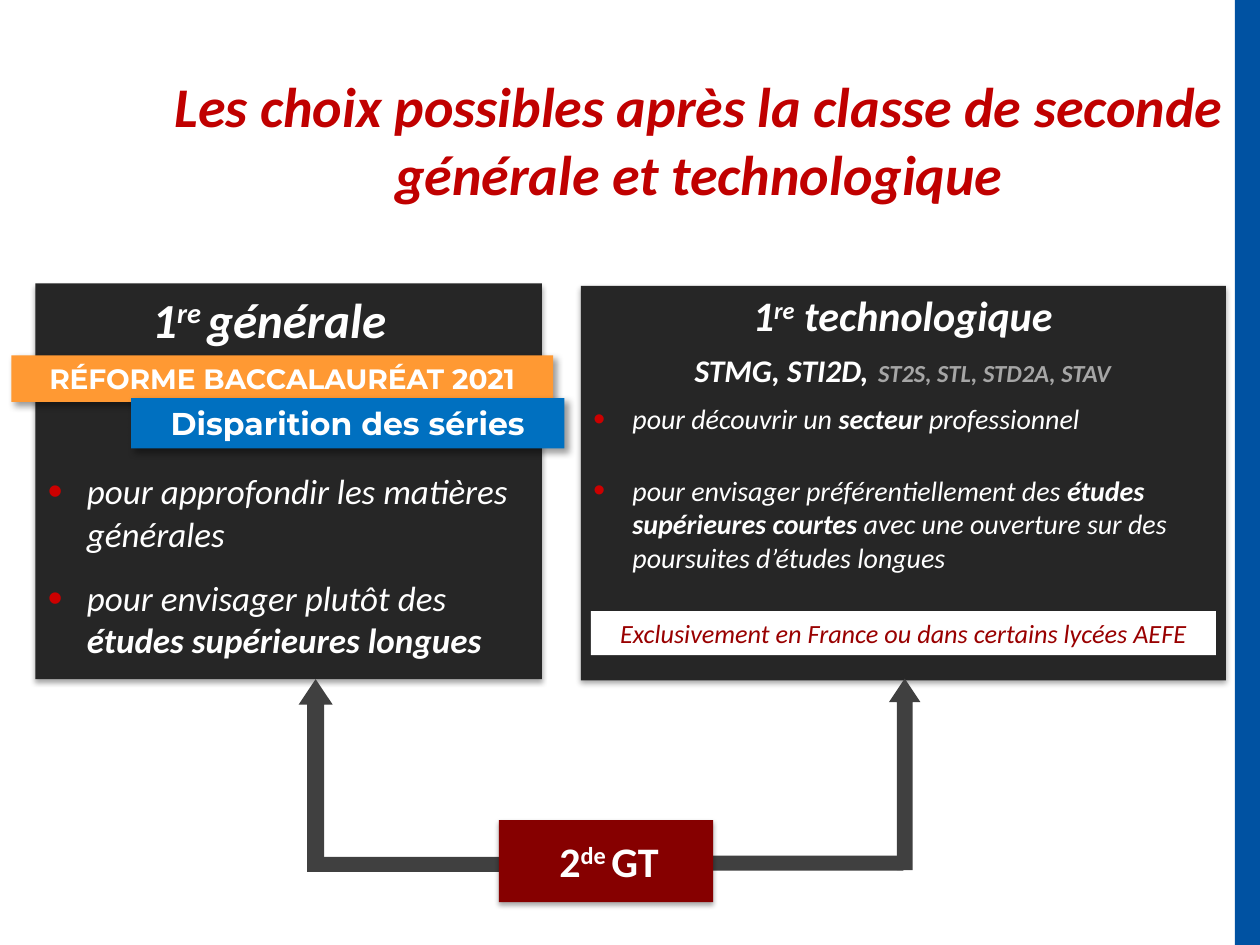
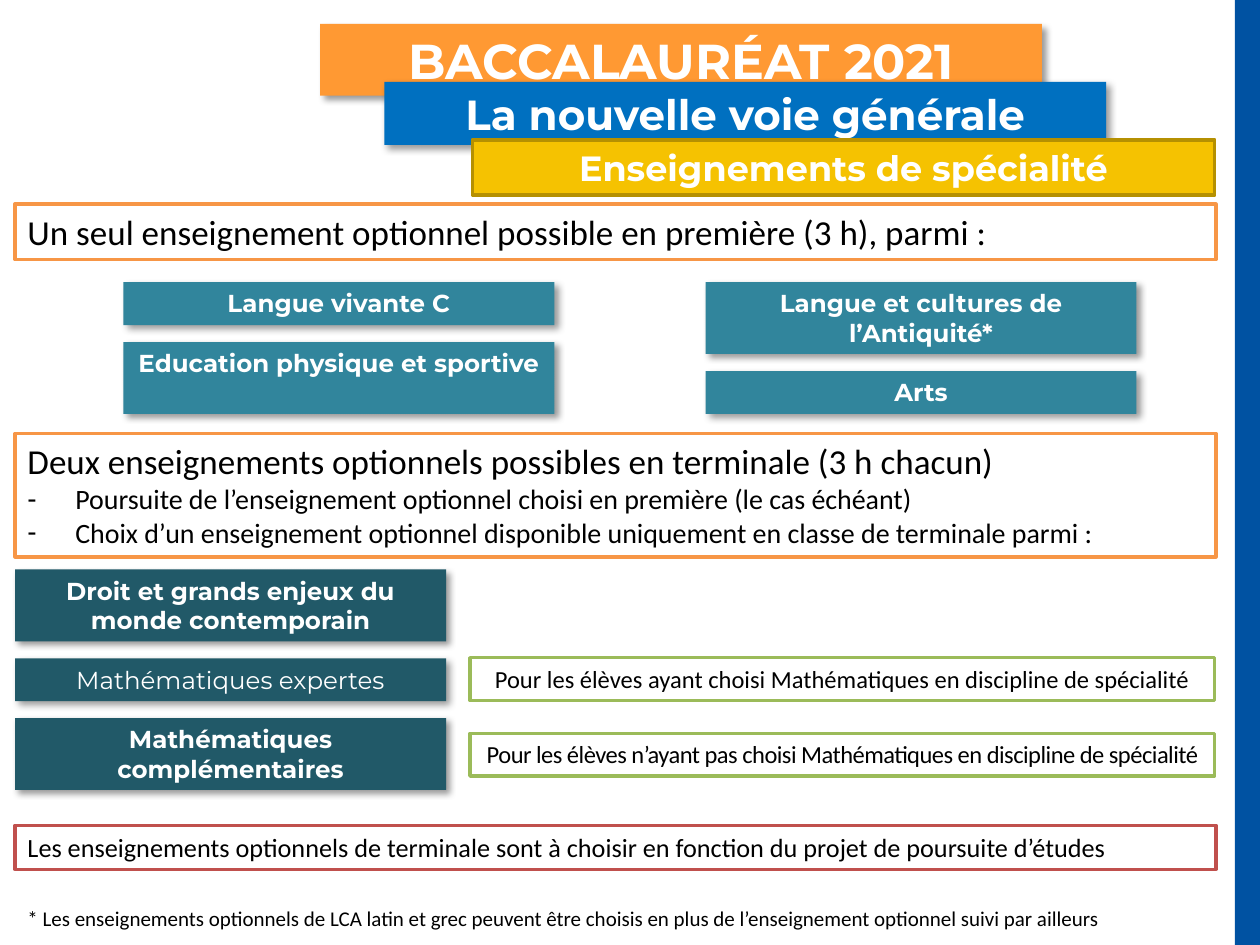
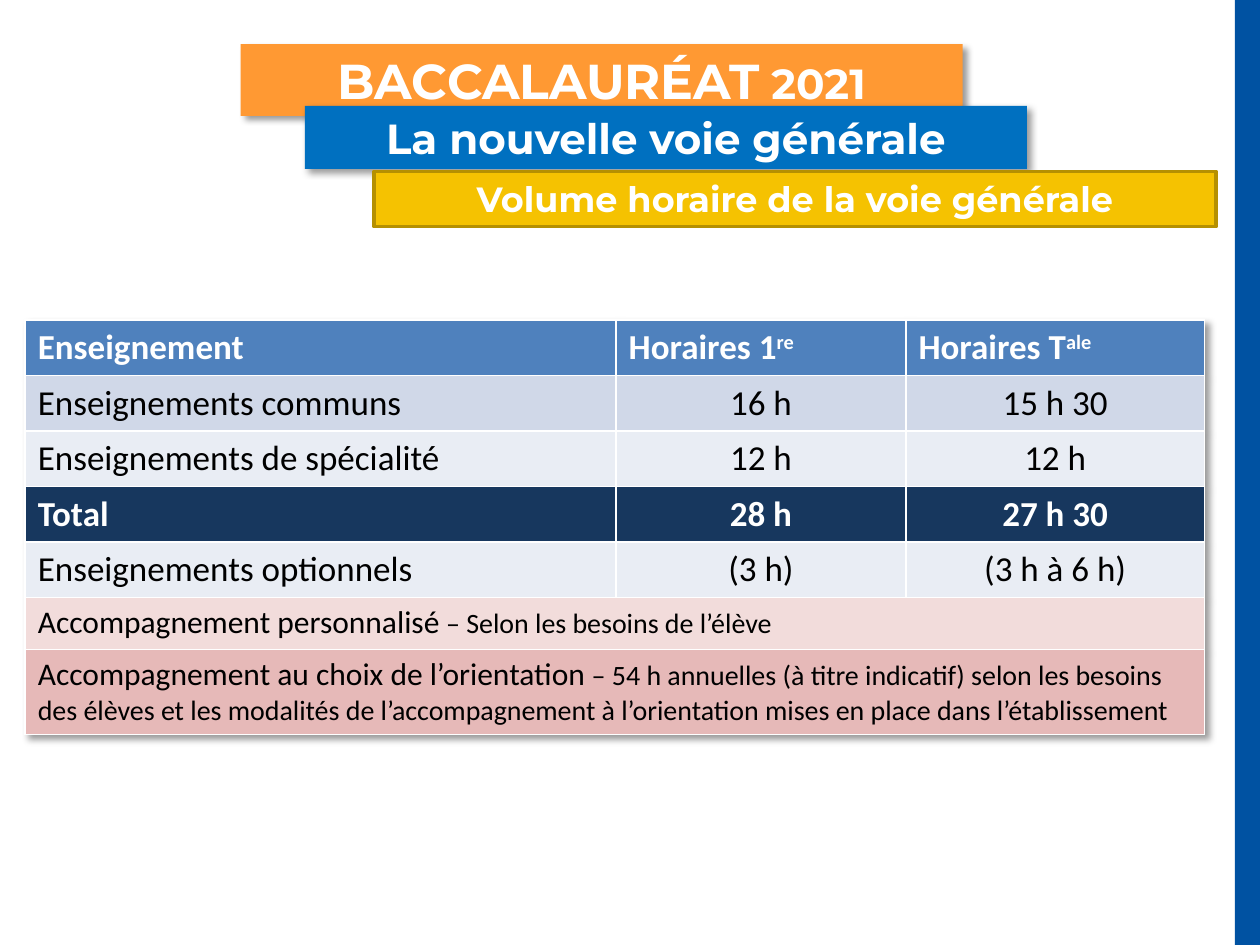
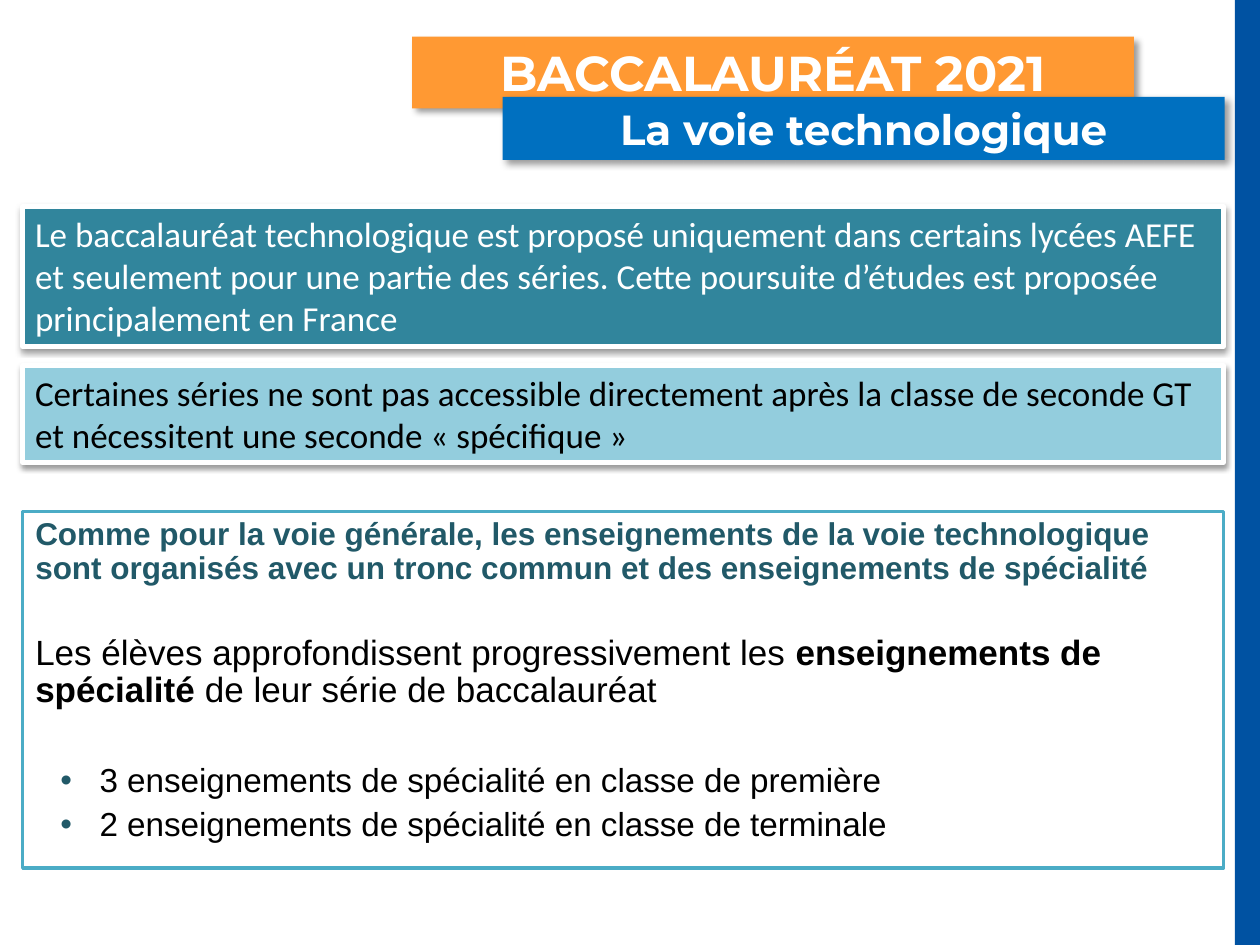
from dataclasses import dataclass, replace
from typing import Any, NamedTuple, Optional

from lxml import etree
from pptx import Presentation
from pptx import util as u
from pptx.dml.color import RGBColor
from pptx.enum import shapes, text
from pptx.oxml.ns import qn

# Shared look
COLORS = {
    "white": "FFFFFF", "black": "000000", "band": "0052A2",
    "red": "C00000", "bullet": "CC0000", "maroon": "860000", "notice": "990000",
    "panel": "262626", "arrow": "404040", "muted": "A6A6A6",
    "orange": "FF9933", "blue": "0070C0", "yellow": "F5C201", "ochre": "B59001",
    "teal": "31859C", "dark_teal": "215968", "light_teal": "93CDDD", "aqua": "4BACC6",
    "frame_orange": "F79646", "frame_green": "9BBB59", "frame_red": "C0504D",
    "header": "4F81BD", "row_dark": "D0D8E8", "row_light": "E9EDF4", "total": "17375E",
    "pink": "F2DCDB", "rose": "E6B9B8",
}
WIDTH, HEIGHT = u.Inches(10), u.Inches(7.5)
COLUMN, ROW = WIDTH / 100, HEIGHT / 75  # grid of 100 columns by 75 rows
TITLE_ONLY, TITLE_AND_BODY, TWO_BODIES = 5, 1, 3
LEFT, CENTER = text.PP_ALIGN.LEFT, text.PP_ALIGN.CENTER
RECTANGLE = shapes.MSO_SHAPE.RECTANGLE


class Place(NamedTuple):
    """Columns and rows of the grid."""
    left: float
    top: float
    width: float
    height: float

    def lengths(self) -> list[u.Emu]:
        return [u.Emu(round(value * unit)) for value, unit in zip(self, (COLUMN, ROW) * 2)]


class Shadow(NamedTuple):
    opacity: int
    blur: float
    distance: float
    angle: int


@dataclass(frozen=True)
class Style:
    font: str = "Calibri"
    size: float = 20
    color: str = "black"
    bold: bool = False
    italic: bool = False
    raised: bool = False
    spacing: float = 0


class Span(NamedTuple):
    text: str
    style: Style


@dataclass(frozen=True)
class Line:
    spans: tuple[Span, ...]
    align: Any = LEFT
    before: float = 0
    leading: float = 1
    margin: float = 0
    hanging: float = 0
    bullet: str = ""
    bullet_color: str = "black"
    bullet_percent: int = 100


@dataclass(frozen=True)
class Box:
    place: Place
    lines: tuple[Line, ...] = ()
    fill: Optional[str] = None
    outline: Optional[str] = None
    outline_width: float = 2
    shadow: Optional[Shadow] = None
    wrap: bool = True


CARD_SHADOW = Shadow(40, 4, 3, 45)
PANEL_SHADOW = Shadow(35, 3.1, 1.8, 90)
NOTE_SHADOW = Shadow(38, 3.1, 1.6, 90)
BODY = Style()
BANNER = Style("Montserrat", 28, "white", bold=True)
CARD = replace(BANNER, size=14)
EXAM = "BACCALAURÉAT"


# Drawing tools
def rgb(name: str) -> RGBColor:
    return RGBColor.from_string(COLORS[name])


def line(content: str, style: Style, **layout: Any) -> Line:
    return Line((Span(content, style),), **layout)


def effect_list(parent: Any, shadow: Shadow) -> None:
    outer = etree.SubElement(
        parent, qn("a:outerShdw"), blurRad=str(u.Pt(shadow.blur)),
        dist=str(u.Pt(shadow.distance)), dir=str(shadow.angle * 60000),
        algn="ctr", rotWithShape="0")
    color = etree.SubElement(outer, qn("a:srgbClr"), val=COLORS["black"])
    etree.SubElement(color, qn("a:alpha"), val=str(shadow.opacity * 1000))


def set_bullet(paragraph: Any, layout: Line) -> None:
    properties = paragraph._p.get_or_add_pPr()
    properties.set("marL", str(u.Inches(layout.margin)))
    properties.set("indent", str(-u.Inches(layout.hanging)))
    if not layout.bullet:
        etree.SubElement(properties, qn("a:buNone"))
        return
    color = etree.SubElement(properties, qn("a:buClr"))
    etree.SubElement(color, qn("a:srgbClr"), val=COLORS[layout.bullet_color])
    etree.SubElement(properties, qn("a:buSzPct"), val=str(layout.bullet_percent * 1000))
    etree.SubElement(properties, qn("a:buFont"), typeface="Arial")
    etree.SubElement(properties, qn("a:buChar"), char=layout.bullet)


def write_line(paragraph: Any, layout: Line) -> None:
    set_bullet(paragraph, layout)
    paragraph.alignment = layout.align
    paragraph.space_before = u.Pt(layout.before)
    paragraph.line_spacing = layout.leading
    for span in layout.spans:
        run, style = paragraph.add_run(), span.style
        run.text = span.text
        run.font.name, run.font.size = style.font, u.Pt(style.size)
        run.font.bold, run.font.italic = style.bold, style.italic
        run.font.color.rgb = rgb(style.color)
        if style.raised:
            run._r.get_or_add_rPr().set("baseline", "30000")
        if style.spacing:
            run._r.get_or_add_rPr().set("spc", str(round(style.spacing * 100)))


def write(frame: Any, lines: tuple[Line, ...]) -> None:
    for index, layout in enumerate(lines):
        write_line(frame.add_paragraph() if index else frame.paragraphs[0], layout)


def draw(target: Any, box: Box, shape: Any = None) -> Any:
    """Draw a box as a new shape, or give its look to a placeholder."""
    lengths = box.place.lengths()
    if shape is not None:
        shape.left, shape.top, shape.width, shape.height = lengths
    elif box.fill or box.outline:
        shape = target.add_shape(RECTANGLE, *lengths)
    else:
        shape = target.add_textbox(*lengths)
    if box.fill:
        shape.fill.solid()
        shape.fill.fore_color.rgb = rgb(box.fill)
    else:
        shape.fill.background()
    if box.outline:
        shape.line.color.rgb = rgb(box.outline)
        shape.line.width = u.Pt(box.outline_width)
    else:
        shape.line.fill.background()
    shape.shadow.inherit = False
    if box.shadow:
        effect_list(shape.element.spPr.find(qn("a:effectLst")), box.shadow)
    if box.lines:
        frame = shape.text_frame
        frame.word_wrap = box.wrap
        frame.auto_size = text.MSO_AUTO_SIZE.NONE
        frame.vertical_anchor = text.MSO_ANCHOR.TOP
        write(frame, box.lines)
    return shape


def card(label: str, place: Place, fill: str, style: Style = CARD) -> Box:
    return Box(place, (line(label, style, align=CENTER),), fill, shadow=CARD_SHADOW)


def draw_stack(slide: Any, left: float, top: float, fill: str,
               cards: list[tuple[str, float, Style]]) -> None:
    """Cards one under the other, with an equal gap."""
    for label, height, style in cards:
        draw(slide.shapes, card(label, Place(left, top, 34.2, height), fill, style))
        top += height + 1.35


def draw_heading(slide: Any, left: float, top: float, track: str, track_at: tuple[float, float],
                 year_size: float = 28, topic: str = "",
                 topic_place: Optional[Place] = None) -> None:
    """Stepped banners: the exam (slide title), the track and the topic."""
    exam = Line((Span(EXAM, BANNER), Span(" 2021", replace(BANNER, size=year_size))),
                align=CENTER)
    draw(slide.shapes, Box(Place(left, top, 57.3, 5.7), (exam,), "orange",
                           shadow=CARD_SHADOW), slide.shapes.title)
    draw(slide.shapes, card(track, Place(*track_at, 57.3, 5), "blue", replace(BANNER, size=24)))
    if topic_place:
        label = line(topic, replace(BANNER, size=20), align=CENTER)
        draw(slide.shapes, Box(topic_place, (label,), "yellow", "ochre"))


def new_slide(presentation: Any, layout: int) -> Any:
    return presentation.slides.add_slide(presentation.slide_layouts[layout])


def add_master_band(presentation: Any, slide: Any) -> None:
    band = draw(slide.shapes, Box(Place(98, 0, 2, 75), fill="band"))
    band.element.nvSpPr.cNvPr.id = 99
    presentation.slide_master.shapes.element.append(band.element)


# Slide 1: choices after the "seconde"
def draw_choices(slide: Any) -> None:
    title = slide.shapes.title
    title_style = Style(size=32, color="red", bold=True, italic=True)
    draw(slide.shapes, Box(Place(12.2, 5.2, 86.6, 11.8), (
        line("Les choix possibles après la classe de seconde générale et technologique",
             title_style, align=CENTER),)), title)

    for place in (Place(2.8, 22.5, 40.2, 31.4), Place(46.1, 22.7, 51.2, 31.3)):
        panel = draw(slide.shapes, Box(place, fill="panel", shadow=PANEL_SHADOW))
        title.element.addprevious(panel.element)

    # Arrows and their feet
    for place in (Place(17.4, 60.2, 15.3, 2.7), Place(64.2, 60.2, 15.2, 2.5)):
        arrow = slide.shapes.add_shape(shapes.MSO_SHAPE.LEFT_ARROW, *place.lengths())
        arrow.rotation = 90
        arrow.adjustments[0], arrow.adjustments[1] = 0.5, 0.75
        arrow.fill.solid()
        arrow.fill.fore_color.rgb = rgb("arrow")
        arrow.line.fill.background()
        arrow.shadow.inherit = False
    for place in (Place(24.4, 68, 16.6, 1.2), Place(56.5, 67.9, 15.2, 1.2)):
        draw(slide.shapes, Box(place, fill="arrow"))

    # Panel headings
    head = Style(size=28, color="white", bold=True, italic=True)
    small = replace(head, size=24)
    raised = replace(head, raised=True)
    hang = {"margin": 0.31, "hanging": 0.31}
    draw(slide.shapes, Box(Place(11.1, 22.5, 22.5, 5.7), (
        Line((Span("1", head), Span("re ", raised), Span("générale", head)), **hang),),
        wrap=False))
    draw(slide.shapes, Box(Place(50, 22.5, 43.3, 9.1), (
        Line((Span("1", small), Span("re", replace(small, raised=True)),
              Span(" technologique", small)), align=CENTER, **hang),
        Line((Span("STMG, STI2D,", replace(head, size=18)), Span(" ", small),
              Span("ST2S, STL, STD2A, STAV", replace(head, size=14, color="muted"))),
             align=CENTER, **hang))))

    # Panel lists
    plain = Style(size=20, color="white", italic=True)
    strong = replace(plain, bold=True)
    plain_small, strong_small = replace(plain, size=16), replace(strong, size=16)
    dots = {**hang, "bullet": "•", "bullet_color": "bullet", "bullet_percent": 120}
    draw(slide.shapes, Box(Place(2.8, 36.8, 40.1, 16.3), (
        line("pour approfondir les matières générales", plain, **dots),
        Line((Span("pour envisager plutôt des ", plain),
              Span("études supérieures longues", strong)), before=13, **dots))),
        slide.placeholders[1])
    draw(slide.shapes, Box(Place(46.1, 31.4, 48.9, 14.8), (
        Line((Span("pour découvrir un ", plain_small), Span("secteur ", strong_small),
              Span("professionnel", plain_small)), **dots),
        Line((Span("pour envisager préférentiellement des ", plain_small),
              Span("études supérieures courtes ", strong_small),
              Span("avec une ouverture sur des poursuites d’études longues", plain_small)),
             before=21.5, **dots))),
        slide.placeholders[2])

    # Starting class
    start = slide.shapes.add_group_shape().shapes
    upright = replace(small, italic=False)
    draw(start, Box(Place(39.6, 65.1, 17, 6.5), fill="maroon", shadow=PANEL_SHADOW))
    draw(start, Box(Place(43.4, 65.8, 11.5, 5), (
        Line((Span("2", upright), Span("de ", replace(upright, raised=True)),
              Span("GT", upright))),), wrap=False))

    # Notice and reform labels
    draw(slide.shapes, Box(Place(46.9, 48.5, 49.6, 3.5), (
        line("Exclusivement en France ou dans certains lycées AEFE",
             Style(size=15, color="notice", italic=True), align=CENTER),), "white"))
    draw(slide.shapes, card("RÉFORME BACCALAURÉAT 2021", Place(0.9, 28.2, 43, 3.7), "orange",
                            replace(BANNER, size=16)))
    draw(slide.shapes, card("Disparition des séries", Place(10.4, 31.6, 34.4, 4), "blue",
                            replace(BANNER, size=18)))


# Slide 2: optional courses
def draw_options(slide: Any) -> None:
    dash = {"margin": 0.38, "hanging": 0.38, "bullet": "-"}
    item = replace(BODY, size=16)
    draw(slide.shapes, Box(Place(1.2, 16.2, 95.3, 4.4), (
        line("Un seul enseignement optionnel possible en première (3 h), parmi :", BODY),),
        outline="frame_orange"))
    draw_stack(slide, 9.8, 22.4, "teal", [
        ("Langue vivante C", 3.4, CARD), ("Education physique et sportive", 5.7, CARD)])
    draw_stack(slide, 56, 22.4, "teal", [
        ("Langue et cultures de l’Antiquité*", 5.7, CARD), ("Arts", 3.4, CARD)])
    draw(slide.shapes, Box(Place(1.2, 34.4, 95.3, 9.8), (
        line("Deux enseignements optionnels possibles en terminale (3 h chacun)", BODY),
        line("Poursuite de l’enseignement optionnel choisi en première (le cas échéant)",
             item, **dash),
        line("Choix d’un enseignement optionnel disponible uniquement en classe de "
             "terminale parmi :", item, **dash)), outline="frame_orange"))
    draw_stack(slide, 1.2, 45.2, "dark_teal", [
        ("Droit et grands enjeux du monde contemporain", 5.7, CARD),
        ("Mathématiques expertes", 3.4, replace(CARD, bold=False)),
        ("Mathématiques complémentaires", 5.7, CARD)])

    # Conditions and notes
    condition = replace(BODY, size=14)
    for top, label, style in (
            (52.2, "Pour les élèves ayant choisi Mathématiques en discipline de spécialité",
             condition),
            (58.2, "Pour les élèves n’ayant pas choisi Mathématiques en discipline de spécialité",
             replace(condition, spacing=-0.3))):
        draw(slide.shapes, Box(Place(37.3, top, 59.1, 3.4),
                               (line(label, style, align=CENTER),), outline="frame_green"))
    draw(slide.shapes, Box(Place(1.2, 65.5, 95.3, 3.5), (
        line("Les enseignements optionnels de terminale sont à choisir en fonction du projet "
             "de poursuite d’études", replace(BODY, size=15)),), outline="frame_red"))
    draw(slide.shapes, Box(Place(1.2, 71.4, 95.3, 3), (
        line("* Les enseignements optionnels de LCA latin et grec peuvent être choisis en plus "
             "de l’enseignement optionnel suivi par ailleurs", replace(BODY, size=12)),)))
    draw_heading(slide, 25.4, 1.9, "La nouvelle voie générale", (30.5, 6.5),
                 topic="Enseignements de spécialité", topic_place=Place(37.5, 11.1, 58.9, 4.4))


# Slide 3: weekly hours
def draw_hours(slide: Any) -> None:
    draw_heading(slide, 19.1, 3.5, "La nouvelle voie générale", (24.2, 8.4), year_size=24,
                 topic="Volume horaire de la voie générale",
                 topic_place=Place(29.7, 13.6, 66.8, 4.4))
    header = replace(BODY, color="white", bold=True)
    header_raised = replace(header, raised=True)
    rows = [
        ("row_dark", BODY, ("Enseignements communs", "16 h", "15 h 30")),
        ("row_light", BODY, ("Enseignements de spécialité", "12 h", "12 h")),
        ("total", header, ("Total", "28 h", "27 h 30")),
        ("row_light", BODY, ("Enseignements optionnels", "(3 h)", "(3 h à 6 h)")),
    ]
    support = [
        ("pink", "Accompagnement personnalisé", " – Selon les besoins de l’élève"),
        ("rose", "Accompagnement au choix de l’orientation",
         " – 54 h annuelles (à titre indicatif) selon les besoins des élèves et les modalités "
         "de l’accompagnement à l’orientation mises en place dans l’établissement"),
    ]
    contents = [("header", [
        line("Enseignement", header),
        Line((Span("Horaires 1", header), Span("re", header_raised))),
        Line((Span("Horaires T", header), Span("ale", header_raised)))])]
    contents += [(fill, [line(value, style, align=CENTER if index else LEFT)
                         for index, value in enumerate(values)]) for fill, style, values in rows]
    contents += [(fill, [Line((Span(name, replace(BODY, size=18)),
                               Span(detail, replace(BODY, size=16))))])
                 for fill, name, detail in support]

    row_height = 4.1
    place = Place(2, 25.4, 93.6, row_height * len(contents))
    table = slide.shapes.add_table(len(contents), 3, *place.lengths()).table
    for column, width in zip(table.columns, (46.9, 23, 23.7)):
        column.width = u.Emu(round(width * COLUMN))
    for row_index, (fill, lines) in enumerate(contents):
        if len(lines) == 1:
            table.cell(row_index, 0).merge(table.cell(row_index, 2))
        for column_index in range(3):
            cell = table.cell(row_index, column_index)
            cell.fill.solid()
            cell.fill.fore_color.rgb = rgb(fill)
            if column_index < len(lines):
                write(cell.text_frame, (lines[column_index],))
    effects = etree.Element(qn("a:effectLst"))
    effect_list(effects, CARD_SHADOW)
    table._tbl.tblPr.insert(0, effects)


# Slide 4: technological track
def draw_technological(slide: Any) -> None:
    draw_heading(slide, 32.7, 2.9, "La voie technologique", (39.9, 7.7))
    arial = Style("Arial", 20)
    item = replace(arial, size=19)
    dots = {"margin": 0.51, "hanging": 0.31, "bullet": "•", "bullet_color": "dark_teal",
            "leading": 0.9}
    draw(slide.shapes, Box(Place(1.8, 40.6, 95.3, 28.3), (
        line("Comme pour la voie générale, les enseignements de la voie technologique sont "
             "organisés avec un tronc commun et des enseignements de spécialité",
             Style("Arial", 18, "dark_teal", bold=True), leading=0.9),
        Line((Span("Les élèves approfondissent progressivement les ", arial),
              Span("enseignements de spécialité ", replace(arial, bold=True)),
              Span("de leur série de baccalauréat", arial)), before=28, leading=0.9),
        line("3 enseignements de spécialité en classe de première", item, before=30.5, **dots),
        line("2 enseignements de spécialité en classe de terminale", item, before=4.8, **dots)),
        outline="aqua"), slide.placeholders[1])
    notes = (
        (Place(1.8, 16.4, 95.3, 11.1), "teal", "white",
         "Le baccalauréat technologique est proposé uniquement dans certains lycées AEFE et "
         "seulement pour une partie des séries. Cette poursuite d’études est proposée "
         "principalement en France"),
        (Place(1.8, 29, 95.3, 7.7), "light_teal", "black",
         "Certaines séries ne sont pas accessible directement après la classe de seconde GT et "
         "nécessitent une seconde « spécifique »"))
    for place, fill, color, content in notes:
        draw(slide.shapes, Box(place, (line(content, replace(BODY, color=color)),), fill,
                               "white", 3, NOTE_SHADOW))


def main() -> None:
    presentation = Presentation()
    presentation.slide_width, presentation.slide_height = WIDTH, HEIGHT
    pages = ((TWO_BODIES, draw_choices), (TITLE_ONLY, draw_options),
             (TITLE_ONLY, draw_hours), (TITLE_AND_BODY, draw_technological))
    for index, (layout, draw_page) in enumerate(pages):
        slide = new_slide(presentation, layout)
        if index == 0:
            add_master_band(presentation, slide)
        draw_page(slide)
    presentation.save("out.pptx")


if __name__ == "__main__":
    main()
